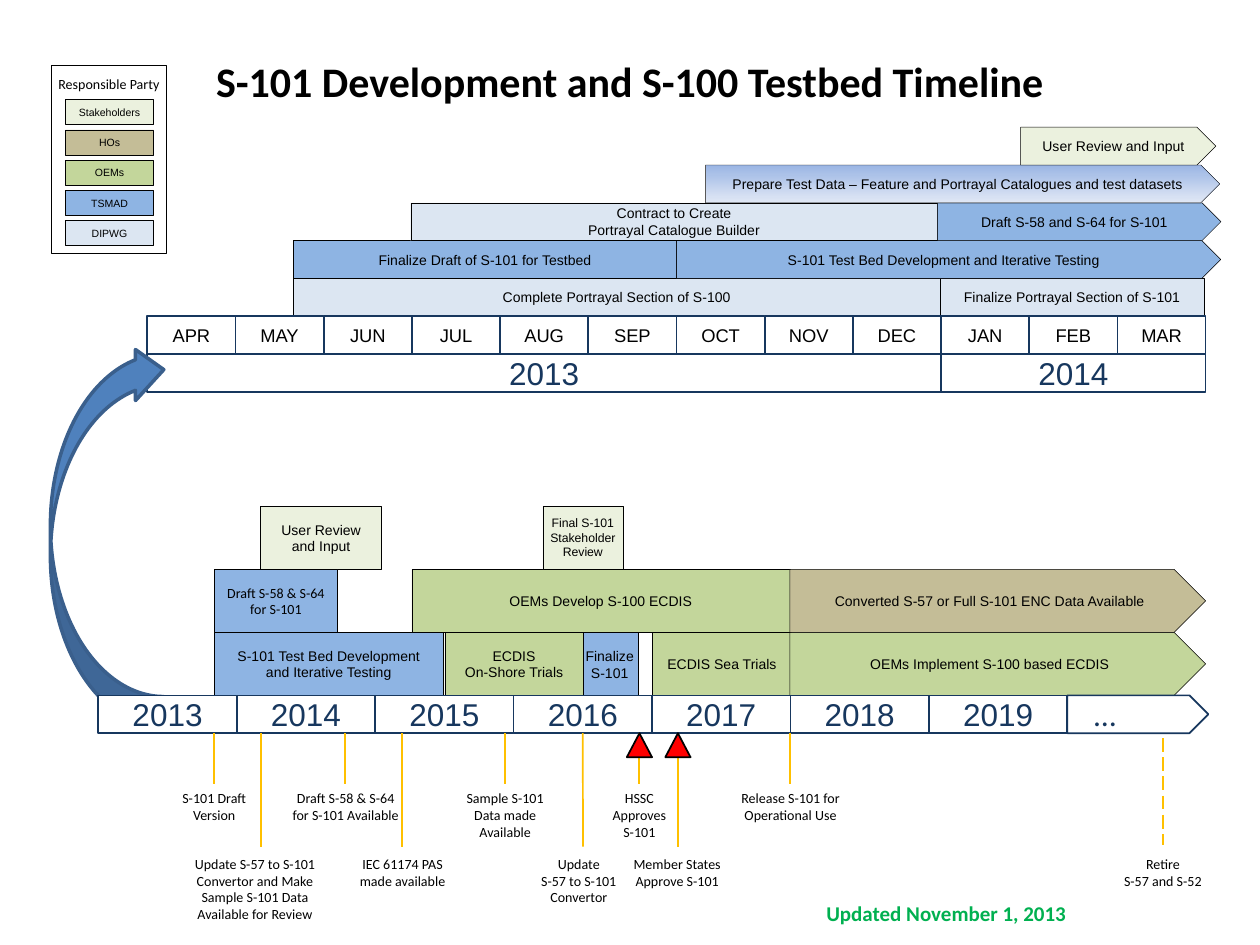
from copy import deepcopy

from lxml.etree import SubElement
from pptx import Presentation
from pptx.dml.color import RGBColor
from pptx.enum.dml import MSO_LINE
from pptx.enum.shapes import MSO_CONNECTOR, MSO_SHAPE
from pptx.enum.text import MSO_ANCHOR, MSO_AUTO_SIZE, PP_ALIGN
from pptx.oxml.ns import qn
from pptx.util import Pt

STAKEHOLDERS = "EBF1DE"
OFFICES = "C4BD97"
MAKERS = "C3D69B"
TSMAD = "8EB4E3"
DIPWG = "DCE6F2"
NAVY = "17375E"
RECTANGLE = MSO_SHAPE.RECTANGLE
PENTAGON = MSO_SHAPE.PENTAGON

MONTHS = ["APR", "MAY", "JUN", "JUL", "AUG", "SEP", "OCT", "NOV", "DEC", "JAN", "FEB", "MAR"]
MONTH_LEFT, MONTH_TOP, MONTH_WIDTH, BAND = 84.2, 180.7, 50.4, 21.6
YEAR_LEFT, YEAR_TOP, YEAR_WIDTH, TASK = 56.2, 397.4, 79.1, 36
AXIS_BOTTOM = YEAR_TOP + BAND

NEAR_TASKS = [
    (1, "Complete Portrayal Section of S-100", 167.8, 369.4, DIPWG, RECTANGLE),
    (1, "Finalize Portrayal Section of S-101", 537.1, 151.2, DIPWG, RECTANGLE),
    (2, "Finalize Draft of S-101 for Testbed", 167.8, 218.9, TSMAD, RECTANGLE),
    (2, "S-101 Test Bed Development and Iterative Testing", 386.6, 311, TSMAD, PENTAGON),
    (3, "Contract to Create\nPortrayal Catalogue Builder", 234.7, 301, DIPWG, RECTANGLE),
    (3, "Draft S-58 and S-64 for S-101", 535.7, 162, TSMAD, PENTAGON),
    (4, "Prepare Test Data – Feature and Portrayal Catalogues and test datasets",
     403.2, 293.8, ("9AB5E4", "E1E8F5"), PENTAGON),
    (5, "User Review and Input", 583.2, 111.6, STAKEHOLDERS, PENTAGON),
]
LONG_TASKS = [
    (1, "", 331.9, 33.1, TSMAD, RECTANGLE),
    (1, "S-101 Test Bed Development\nand Iterative Testing", 122.4, 131, TSMAD, RECTANGLE),
    (1, "ECDIS\nOn-Shore Trials", 254.2, 79.2, MAKERS, RECTANGLE),
    (1, "ECDIS Sea Trials", 373, 79.2, MAKERS, RECTANGLE),
    (1, "OEMs Implement S-100 based ECDIS", 451.4, 237.6, MAKERS, PENTAGON),
    (2, "OEMs Develop S-100 ECDIS", 235.4, 216, MAKERS, RECTANGLE),
    (2, "Converted S-57 or Full S-101 ENC Data Available", 451.4, 237.6, OFFICES, PENTAGON),
    (3, "User Review and Input", 149, 69.1, STAKEHOLDERS, RECTANGLE),
    (3, "", 310.3, 46.1, STAKEHOLDERS, RECTANGLE),
]
UPPER_MILESTONES = [
    ("S-101 Draft Version", 122.4, 92.2, 60.5, 26.6),
    ("Draft S-58 & S-64 for S-101 Available", 197.3, 159.1, 77, 26.6),
    ("Sample S-101\nData made\nAvailable", 288.7, 259.2, 59, 36.7),
    ("HSSC Approves\nS-101", 365, 337.7, 55.4, 36.7),
    ("Release S-101 for Operational Use", 451.4, 414.7, 74.2, 26.6),
]
LOWER_MILESTONES = [
    ("Update S-57 to S-101 Convertor and Make Sample S-101 Data Available for Review",
     149, 103.7, 84.2, 46.1),
    ("IEC 61174 PAS made available", 229.7, 193, 74.2, 26.6),
    ("Update\nS-57 to S-101 Convertor", 333.1, 288.7, 84.2, 36.7),
    ("Member States\nApprove S-101", 387.4, 342.7, 88.6, 26.6),
]
LEGEND = [("Stakeholders", STAKEHOLDERS), ("HOs", OFFICES), ("OEMs", MAKERS),
          ("TSMAD", TSMAD), ("DIPWG", DIPWG)]


def color(value):
    return RGBColor.from_string(value)


def write(frame, text, size=8, font="Arial", ink="000000", bold=False, align=PP_ALIGN.CENTER):
    paragraph = frame.paragraphs[0]
    paragraph.text = text
    paragraph.alignment = align
    for run in paragraph.runs:
        run.font.size = Pt(size)
        run.font.name = font
        run.font.bold = bold
        run.font.color.rgb = color(ink)
    for line_break in paragraph._p.findall(qn("a:br")):
        line_break.append(deepcopy(paragraph.runs[0]._r.rPr))


class Timeline:
    def __init__(self, slide, outline="000000", thickness=0.25):
        self.slide = slide
        self.outline = outline
        self.thickness = thickness

    def shape(self, kind, left, top, width, height, fill=None, text="",
              outline=None, thickness=None, **text_format):
        shape = self.slide.shapes.add_shape(kind, Pt(left), Pt(top), Pt(width), Pt(height))
        shape.shadow.inherit = False
        if fill is None:
            shape.fill.background()
        elif isinstance(fill, tuple):
            shape.fill.gradient()
            shape.fill.gradient_angle = 270
            for stop, shade, position in zip(shape.fill.gradient_stops, fill, (0, 1)):
                stop.color.rgb = color(shade)
                stop.position = position
        else:
            shape.fill.solid()
            shape.fill.fore_color.rgb = color(fill)
        shape.line.color.rgb = color(outline or self.outline)
        shape.line.width = Pt(thickness or self.thickness)
        shape.text_frame.vertical_anchor = MSO_ANCHOR.MIDDLE
        if text:
            write(shape.text_frame, text, **text_format)
        return shape

    def axis_cell(self, left, top, width, text, fill="FFFFFF", kind=RECTANGLE, **text_format):
        return self.shape(kind, left, top, width, BAND, fill, text, NAVY, 1, **text_format)

    def label(self, text, left, top, width, height, wrap=True, **text_format):
        box = self.slide.shapes.add_textbox(Pt(left), Pt(top), Pt(width), Pt(height))
        box.text_frame.word_wrap = wrap
        box.text_frame.auto_size = MSO_AUTO_SIZE.SHAPE_TO_FIT_TEXT
        write(box.text_frame, text, **{"font": "Calibri", **text_format})
        return box

    def marker(self, x, top, bottom, dash=None):
        connector = self.slide.shapes.add_connector(
            MSO_CONNECTOR.STRAIGHT, Pt(x), Pt(top), Pt(x), Pt(bottom))
        connector.line.color.rgb = color("FFC000")
        connector.line.width = Pt(1)
        if dash:
            connector.line.dash_style = dash
        SubElement(connector._element.spPr, qn("a:effectLst"))
        return connector

    def tasks(self, rows, axis_top, height):
        for level, text, left, width, fill, kind in rows:
            self.shape(kind, left, axis_top - level * height, width, height, fill, text,
                       font="Calibri" if text.startswith("Draft S-58 &") else "Arial")

    def milestones(self, rows, line_end, text_top):
        markers = []
        for text, x, left, width, height in rows:
            markers.append(self.marker(x, AXIS_BOTTOM, line_end))
            self.label(text, left, text_top, width, height, wrap="Data made" not in text)
        return markers


def main():
    presentation = Presentation()
    presentation.slide_width = Pt(720)
    presentation.slide_height = Pt(540)
    timeline = Timeline(presentation.slides.add_slide(presentation.slide_layouts[6]))

    timeline.label("S-101 Development and S-100 Testbed Timeline", 0, 28.1, 720, 36.7,
                   size=24, bold=True)
    for index, (party, fill) in enumerate(LEGEND):
        timeline.shape(RECTANGLE, 37.4, 56.9 + 17.28 * index, 50.4, 14.4, fill, party, size=6)
    timeline.shape(RECTANGLE, 29.5, 37.4, 65.5, 107.3)
    timeline.label("Responsible Party", 20.9, 39.6, 82.8, 17.3)

    timeline.tasks(NEAR_TASKS, MONTH_TOP, BAND)
    for index, month in enumerate(MONTHS):
        timeline.axis_cell(MONTH_LEFT + index * MONTH_WIDTH, MONTH_TOP, MONTH_WIDTH, month, size=10.5)
    for year, first, count in (("2013", 0, 9), ("2014", 9, 3)):
        timeline.axis_cell(MONTH_LEFT + first * MONTH_WIDTH, MONTH_TOP + BAND,
                           count * MONTH_WIDTH, year, size=18, ink=NAVY)

    arrow = timeline.shape(MSO_SHAPE.CURVED_LEFT_ARROW, 28.8, 196.6, 64.8, 218.9,
                           "4F81BD", outline="3A5F8C", thickness=2)
    arrow.rotation = 180
    for index, value in enumerate((0.27, 0.45, 0.25)):
        arrow.adjustments[index] = value

    timeline.tasks(LONG_TASKS, YEAR_TOP, TASK)
    timeline.shape(RECTANGLE, 122.4, YEAR_TOP - 2 * TASK, 70.6, TASK, TSMAD,
                   "Draft S-58 & S-64 for S-101", font="Calibri")
    timeline.label("Finalize\nS-101", 325.4, 366.5, 46.1, 26.6, font="Arial")
    timeline.label("Final S-101 Stakeholder Review", 304.6, 290.9, 56.9, 32.4, size=7, font="Arial")

    years = {}
    for index, year in enumerate(range(2013, 2020)):
        years[year] = timeline.axis_cell(YEAR_LEFT + index * YEAR_WIDTH, YEAR_TOP, YEAR_WIDTH,
                                         str(year), size=18, ink=NAVY)
    later = timeline.axis_cell(YEAR_LEFT + 7 * YEAR_WIDTH, YEAR_TOP, 80.6, "…", None, PENTAGON,
                               size=18, font="Calibri", ink=NAVY, align=PP_ALIGN.LEFT)
    later.text_frame.margin_left = Pt(15.3)

    timeline.milestones(UPPER_MILESTONES, 447.8, 447.8)
    lower_markers = timeline.milestones(LOWER_MILESTONES, 483.8, 485.3)
    lower_markers[2].begin_connect(years[2016], 2)
    timeline.marker(664.6, 421.9, 483.1, MSO_LINE.LONG_DASH)
    timeline.label("Retire\nS-57 and S-52", 633.6, 485.3, 61.9, 26.6)
    for left in (358.2, 380.2):
        timeline.shape(MSO_SHAPE.ISOSCELES_TRIANGLE, left, AXIS_BOTTOM, 14.4, 13.7,
                       "FF0000", thickness=1)

    updated = timeline.label("Updated November 1, 2013", 465.1, 507.6, 167.8, 28.8, size=12,
                             ink="00B050", bold=True, align=PP_ALIGN.LEFT)
    updated.text_frame.auto_size = MSO_AUTO_SIZE.NONE
    updated.text_frame.vertical_anchor = MSO_ANCHOR.MIDDLE
    presentation.save("out.pptx")


if __name__ == "__main__":
    main()
